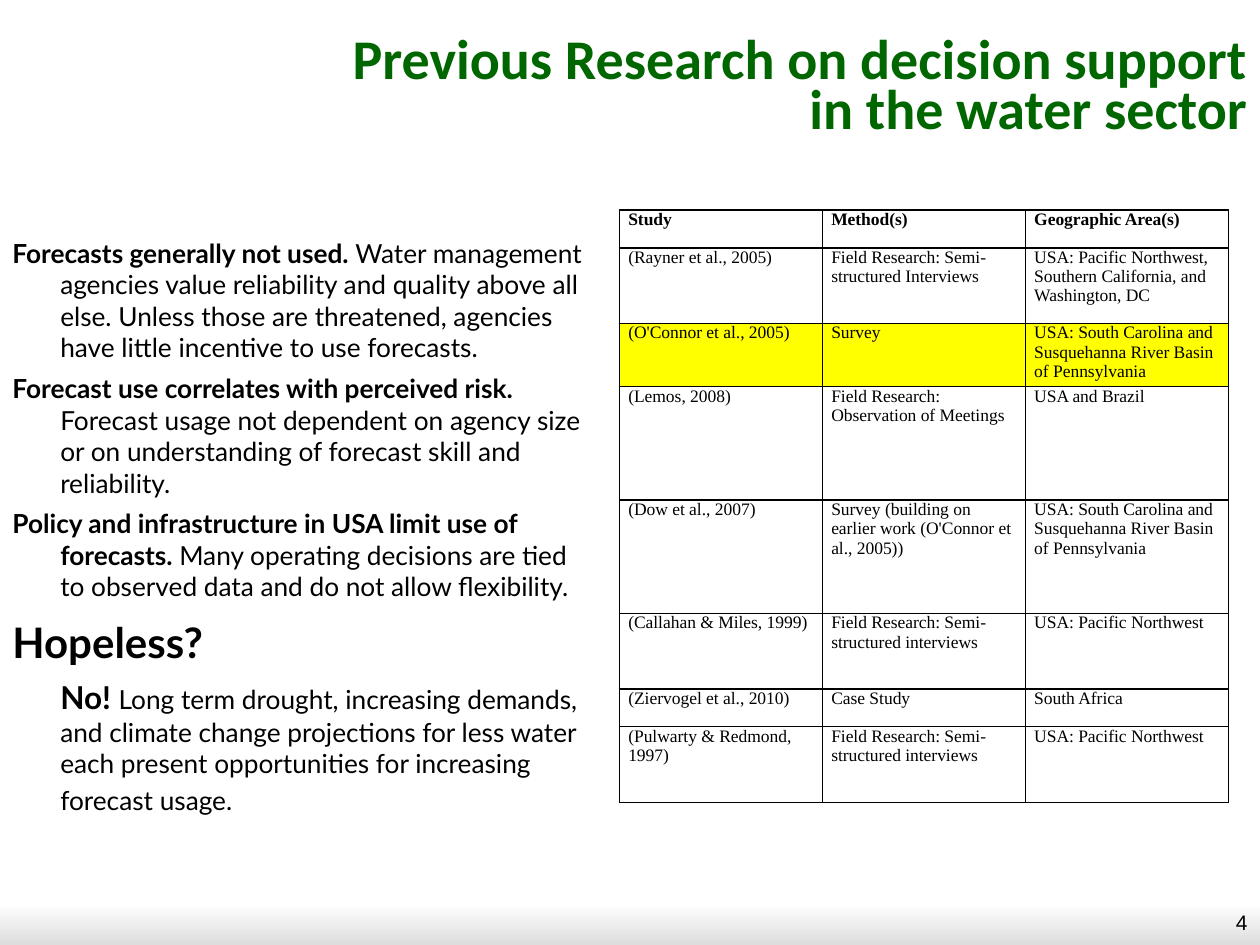
from lxml import etree
from pptx import Presentation
from pptx.dml.color import RGBColor
from pptx.enum.shapes import MSO_SHAPE
from pptx.enum.text import MSO_ANCHOR, MSO_AUTO_SIZE, PP_ALIGN
from pptx.oxml import parse_xml
from pptx.util import Inches, Pt

RECT = MSO_SHAPE.RECTANGLE
MIDDLE = MSO_ANCHOR.MIDDLE
FIXED = MSO_AUTO_SIZE.NONE
RIGHT = PP_ALIGN.RIGHT
UNIT = Inches(1) // 12
NS = "http://schemas.openxmlformats.org/drawingml/2006/main"
INK = {"title": "006600", "text": "000000", "mark": "FFFF00",
       "top": "FFFFFF", "foot": "DDDDDD", "glow": "66FF66"}

POINTS = [
    ("Forecasts generally not used. ",
     "Water management agencies value reliability and quality above all else. "
     "Unless those are threatened, agencies have little incentive to use forecasts."),
    ("Forecast use correlates with perceived risk. ",
     "Forecast usage not dependent on agency size or on understanding of "
     "forecast skill and reliability."),
    ("Policy and infrastructure in USA limit use of forecasts. ",
     "Many operating decisions are tied to observed data and do not allow flexibility."),
]
ANSWER = ("Long term drought, increasing demands, and climate change projections for less "
          "water each present opportunities for increasing forecast usage.")
BASIN = "USA: South Carolina and Susquehanna River Basin of Pennsylvania"
STUDIES = [
    (3.6, "Study", "Method(s)", "Geographic Area(s)"),
    (7.2, "(Rayner et al., 2005)", "Field Research: Semi-structured Interviews",
     "USA: Pacific Northwest, Southern California, and Washington, DC"),
    (3.6, "(O'Connor et al., 2005)", "Survey", BASIN),
    (10.8, "(Lemos, 2008)", "Field Research: Observation of Meetings", "USA and Brazil"),
    (10.8, "(Dow et al., 2007)",
     "Survey (building on earlier work (O'Connor et al., 2005))", BASIN),
    (7.2, "(Callahan & Miles, 1999)", "Field Research: Semi-structured interviews",
     "USA: Pacific Northwest"),
    (3.6, "(Ziervogel et al., 2010)", "Case Study", "South Africa"),
    (7.2, "(Pulwarty & Redmond, 1997)", "Field Research: Semi-structured interviews",
     "USA: Pacific Northwest"),
]


def grid(*cells):
    """Turn grid cells, twelve to the inch, into lengths."""
    return [round(cell * UNIT) for cell in cells]


def write(para, text, size=15, font="Lato", ink="text", bold=False):
    """Add a run of text in the given format."""
    run = para.add_run()
    run.text = text
    run.font.size = Pt(size)
    run.font.name = font
    run.font.bold = bold
    run.font.color.rgb = RGBColor.from_string(INK[ink])
    return run


class Page:
    """Holds the style and the current slide."""

    def __init__(self, deck):
        """Start a title-only slide."""
        self.slide = deck.slides.add_slide(deck.slide_layouts[5])
        self.shapes = self.slide.shapes

    def title(self, text, *box):
        """Place and format the title with its soft glow."""
        shape = self.shapes.title
        shape.left, shape.top, shape.width, shape.height = grid(*box)
        frame = shape.text_frame
        frame.auto_size = FIXED
        frame.vertical_anchor = MIDDLE
        para = frame.paragraphs[0]
        para.alignment = RIGHT
        para.line_spacing = 0.75
        run = write(para, text, size=32, font="Calibri", ink="title", bold=True)
        glow = parse_xml(
            f'<a:effectLst xmlns:a="{NS}"><a:outerShdw blurRad="50800" dist="38100" '
            f'dir="2700000"><a:srgbClr val="{INK["glow"]}"><a:alpha val="60000"/>'
            '</a:srgbClr></a:outerShdw></a:effectLst>')
        run.font.fill._xPr.find(f"{{{NS}}}solidFill").addnext(glow)

    def band(self, *box):
        """Draw the shaded band."""
        shape = self.shapes.add_shape(RECT, *grid(*box))
        shape.shadow.inherit = False
        shape.line.fill.background()
        shape.fill.gradient()
        shape.fill.gradient_angle = 270
        for stop, ink in zip(shape.fill.gradient_stops, ("top", "foot")):
            stop.color.rgb = RGBColor.from_string(INK[ink])

    def text(self, *box):
        """Add a wrapping text box and return its frame."""
        frame = self.shapes.add_textbox(*grid(*box)).text_frame
        frame.word_wrap = True
        return frame

    def body(self, *box):
        """Write the findings with hanging indents."""
        frame = self.text(*box)
        rows = [[(lead, 15, True), (rest, 15, False)] for lead, rest in POINTS]
        rows.append([("Hopeless?", 24, True)])
        rows.append([("No! ", 18, True), (ANSWER, 15, False), (" ", 18, False)])
        for num, row in enumerate(rows):
            para = frame.add_paragraph() if num else frame.paragraphs[0]
            para.space_before = Pt(0.35 * row[0][1] if num else 0)
            props = para._p.get_or_add_pPr()
            props.set("marL", str(Inches(0.38)))
            props.set("indent", str(0 if row is rows[-1] else -Inches(0.38)))
            for words, size, bold in row:
                write(para, words, size=size, bold=bold)

    def number(self, text, *box):
        """Write the slide number."""
        para = self.text(*box).paragraphs[0]
        para.alignment = RIGHT
        write(para, text, size=12, font="Arial")

    def border(self, cell):
        """Draw all four sides of a cell."""
        props = cell._tc.get_or_add_tcPr()
        for side in "LRTB":
            line = etree.SubElement(props, f"{{{NS}}}ln{side}", w=str(Pt(1)))
            fill = etree.SubElement(line, f"{{{NS}}}solidFill")
            etree.SubElement(fill, f"{{{NS}}}srgbClr", val=INK["text"])

    def table(self, *box):
        """Add the table of studies, with one row marked."""
        table = self.shapes.add_table(len(STUDIES), 3, *grid(*box)).table
        table.horz_banding = table.first_row = False
        for num, (tall, *words) in enumerate(STUDIES):
            table.rows[num].height = grid(tall)[0]
            for cell, text in zip(table.rows[num].cells, words):
                cell.margin_left = cell.margin_right = Inches(0.07)
                cell.margin_top = cell.margin_bottom = 0
                self.border(cell)
                if num == 2:
                    cell.fill.solid()
                    cell.fill.fore_color.rgb = RGBColor.from_string(INK["mark"])
                else:
                    cell.fill.background()
                write(cell.text_frame.paragraphs[0], text, size=10,
                      font="Times New Roman", bold=num == 0)


def main():
    """Build and save the slide."""
    deck = Presentation()
    deck.slide_width, deck.slide_height = grid(120, 90)
    page = Page(deck)
    page.band(0, 86, 120, 4)
    page.title("Previous Research on decision support in the water sector", 32, 0, 88, 17)
    page.body(0, 22, 58, 59.4)
    page.number("4", 107, 86, 13, 4)
    page.table(59, 20, 58, 54)
    deck.save("out.pptx")


if __name__ == "__main__":
    main()
